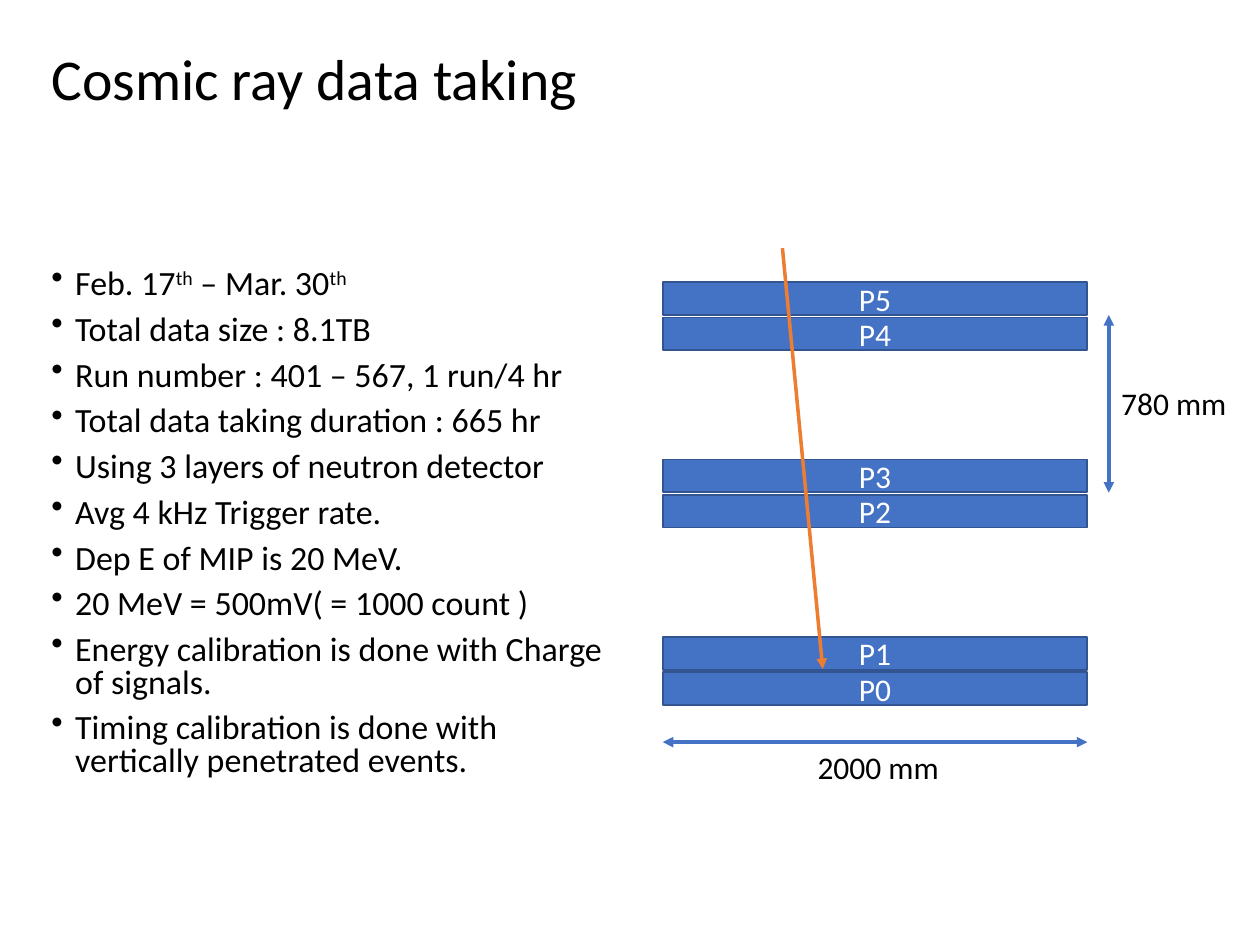
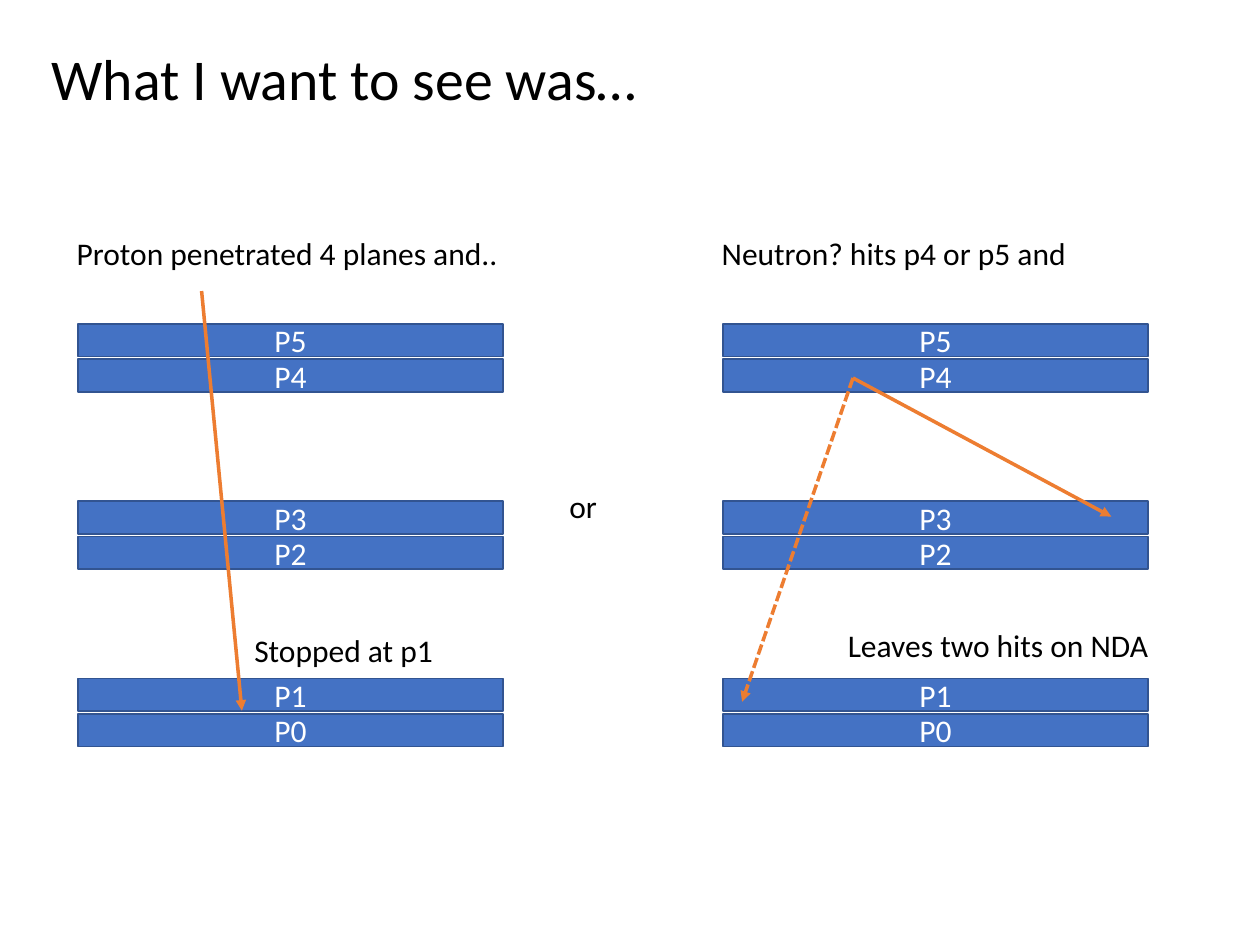
from dataclasses import dataclass

from lxml import etree
from pptx import Presentation
from pptx import util as u
from pptx.dml.color import RGBColor
from pptx.enum import dml, shapes, text
from pptx.oxml.ns import qn


@dataclass(frozen=True)
class Theme:
    font: str = "Calibri"
    ink: str = "000000"
    plane: str = "4472C4"
    plane_edge: str = "325491"
    plane_ink: str = "FFFFFF"
    track: str = "ED7D31"
    title_size: float = 33
    body_size: float = 19.4
    label_size: float = 18
    edge_width: float = 1
    arrow_width: float = 2


# The grid has 100 columns and 75 rows of square cells on a 10 x 7.5 inch slide.
COLUMNS, ROWS = 100, 75
CELL = u.Inches(0.1)

MARGIN = 3.1
PLANE_WIDTH, PLANE_HEIGHT = 33.7, 2.6
PLANE_PITCH, LAYER_PITCH = 2.8, 14.08
LAYERS = (("P5", "P4"), ("P3", "P2"), ("P1", "P0"))
LABEL_HEIGHT = 4


def cells(*counts):
    return [u.Emu(round(count * CELL)) for count in counts]


def write(frame, paragraphs, *, size, color, align=text.PP_ALIGN.LEFT,
          anchor=text.MSO_ANCHOR.TOP, wrap=True, spacing=None, before=None,
          bullet=None, indent=1.88):
    """Fill a text frame; a part between two ^ marks is superscript."""
    frame.word_wrap = wrap
    frame.vertical_anchor = anchor
    for index, line in enumerate(paragraphs):
        paragraph = frame.add_paragraph() if index else frame.paragraphs[0]
        paragraph.alignment = align
        paragraph.line_spacing = spacing
        paragraph.space_before = None if before is None else u.Pt(before)
        if bullet:
            hang, = cells(indent)
            properties = paragraph._p.get_or_add_pPr()
            properties.set("marL", str(hang))
            properties.set("indent", str(-hang))
            etree.SubElement(properties, qn("a:buChar")).set("char", bullet)
        for position, part in enumerate(line.split("^")):
            if not part:
                continue
            run = paragraph.add_run()
            run.text = part
            run.font.name = Theme.font
            run.font.size = u.Pt(size)
            run.font.color.rgb = RGBColor.from_string(color)
            if position % 2:
                run._r.get_or_add_rPr().set("baseline", "30000")


class Deck:
    def __init__(self, theme):
        self.theme = theme
        self.presentation = Presentation()
        self.presentation.slide_width, self.presentation.slide_height = cells(COLUMNS, ROWS)
        self.slide = None

    def add_slide(self, title):
        blank = self.presentation.slide_layouts[6]
        self.slide = self.presentation.slides.add_slide(blank)
        heading = self.slide.shapes.add_textbox(*cells(MARGIN, 2.8, 93.9, 7.4))
        write(heading.text_frame, [title], size=self.theme.title_size,
              color=self.theme.ink, anchor=text.MSO_ANCHOR.MIDDLE, spacing=0.9)

    def bullets(self, points, column, row, width, height):
        body = self.slide.shapes.add_textbox(*cells(column, row, width, height))
        write(body.text_frame, points, size=self.theme.body_size,
              color=self.theme.ink, spacing=0.8, before=7.5, bullet="•")

    def label(self, words, column, row, width):
        box = self.slide.shapes.add_textbox(*cells(column, row, width, LABEL_HEIGHT))
        write(box.text_frame, [words], size=self.theme.label_size,
              color=self.theme.ink, wrap=False)
        box.text_frame.auto_size = text.MSO_AUTO_SIZE.SHAPE_TO_FIT_TEXT

    def arrow(self, start, end, color, *, both_ends=False, dash=None, parent=None):
        target = (parent or self.slide).shapes
        arrow = target.add_connector(shapes.MSO_CONNECTOR.STRAIGHT, *cells(*start, *end))
        arrow.line.color.rgb = RGBColor.from_string(color)
        arrow.line.width = u.Pt(self.theme.arrow_width)
        if dash:
            arrow.line.dash_style = dash
        outline = arrow.line._get_or_add_ln()
        for tip in ("a:headEnd", "a:tailEnd") if both_ends else ("a:tailEnd",):
            etree.SubElement(outline, qn(tip)).set("type", "triangle")
        etree.SubElement(arrow._element.spPr, qn("a:effectLst"))

    def plane(self, name, column, row, parent):
        plane = parent.shapes.add_shape(
            shapes.MSO_SHAPE.RECTANGLE, *cells(column, row, PLANE_WIDTH, PLANE_HEIGHT))
        plane.shadow.inherit = False
        plane.fill.solid()
        plane.fill.fore_color.rgb = RGBColor.from_string(self.theme.plane)
        plane.line.color.rgb = RGBColor.from_string(self.theme.plane_edge)
        plane.line.width = u.Pt(self.theme.edge_width)
        write(plane.text_frame, [name], size=self.theme.label_size,
              color=self.theme.plane_ink, align=text.PP_ALIGN.CENTER,
              anchor=text.MSO_ANCHOR.MIDDLE)

    def detector(self, column, row, track_start, track_end, dash=None):
        """Group three double layers with one particle track."""
        group = self.slide.shapes.add_group_shape()
        for layer, names in enumerate(LAYERS):
            for level, name in enumerate(names):
                self.plane(name, column,
                           row + layer * LAYER_PITCH + level * PLANE_PITCH, group)
        self.arrow(track_start, track_end, self.theme.track, dash=dash, parent=group)


def data_taking(deck):
    deck.add_slide("Cosmic ray data taking")
    deck.bullets([
        "Feb. 17^th^ – Mar. 30^th^",
        "Total data size : 8.1TB",
        "Run number : 401 – 567, 1 run/4 hr",
        "Total data taking duration : 665 hr",
        "Using 3 layers of neutron detector",
        "Avg 4 kHz Trigger rate.",
        "Dep E of MIP is 20 MeV.",
        "20 MeV = 500mV( = 1000 count )",
        "Energy calibration is done with Charge of signals.",
        "Timing calibration is done with vertically penetrated events.",
    ], MARGIN, 20.9, 46.9, 44.1)

    left, top = 52.6, 22.4
    right = left + PLANE_WIDTH
    deck.detector(left, top, (62.1, 19.7), (65.3, 53.1))

    gap_column, width_row = 88, 58.9
    deck.arrow((gap_column, 25), (gap_column, 39.1), deck.theme.plane, both_ends=True)
    deck.label("780 mm", gap_column, 30, 11)
    deck.arrow((right, width_row), (left, width_row), deck.theme.plane, both_ends=True)
    deck.label("2000 mm", 63.9, width_row, 11.7)


def expected_events(deck):
    deck.add_slide("What I want to see was…")
    top, caption_row = 25.7, 18.1

    deck.detector(6.2, top, (16, 23.1), (19.2, 56.4))
    deck.label("Stopped at p1", 19.2, 49.6, 17)
    deck.label("Proton penetrated 4 planes and..", 5.1, caption_row, 35.8)

    deck.label("or", 44.2, 38.2, 4.2)

    first_hit = (67.7, 30)
    deck.detector(57.4, top, first_hit, (58.9, 55.7), dash=dml.MSO_LINE.SQUARE_DOT)
    deck.label("Leaves two hits on NDA", 66.3, 49.2, 26.2)
    deck.label("Neutron? hits p4 or p5 and", 56.3, caption_row, 30.3)
    deck.arrow(first_hit, (88.2, 41), deck.theme.track)


def main():
    deck = Deck(Theme())
    data_taking(deck)
    expected_events(deck)
    deck.presentation.save("out.pptx")


if __name__ == "__main__":
    main()
